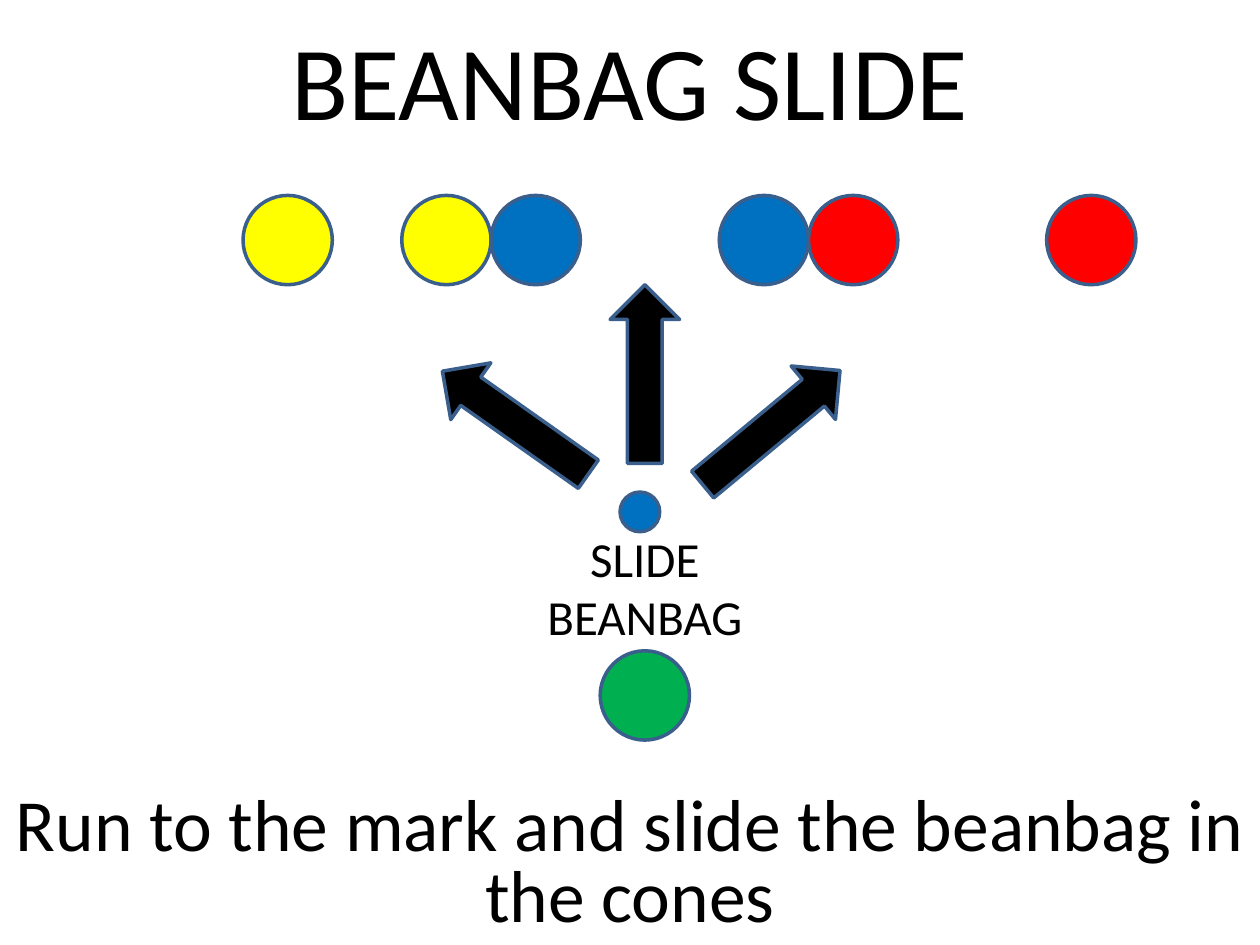
from dataclasses import dataclass

from pptx import Presentation
from pptx.dml.color import RGBColor
from pptx.enum.shapes import MSO_SHAPE
from pptx.enum.text import MSO_ANCHOR, MSO_AUTO_SIZE, PP_ALIGN
from pptx.util import Cm, Pt

OVAL = MSO_SHAPE.OVAL
ARROW = MSO_SHAPE.RIGHT_ARROW
CENTER = PP_ALIGN.CENTER
MIDDLE = MSO_ANCHOR.MIDDLE
TOP = MSO_ANCHOR.TOP


@dataclass(frozen=True)
class Theme:
    font: str = "Calibri"
    title_size: int = 60
    instruction_size: int = 42
    label_size: int = 28
    line_width: int = 2
    outline: str = "3A5F8C"
    black: str = "000000"
    yellow: str = "FFFF00"
    blue: str = "0070C0"
    red: str = "FF0000"
    green: str = "00B050"


@dataclass(frozen=True)
class Circle:
    """A marker on the playing area, in centimetres."""
    left: float
    top: float
    size: float
    color: str


@dataclass(frozen=True)
class Arrow:
    """A throwing direction: position in centimetres, angle in degrees."""
    left: float
    top: float
    angle: float


THEME = Theme()
SLIDE_WIDTH, SLIDE_HEIGHT = 25.4, 19.05
BAND_HEIGHT = 3.18
CONE_SIZE, CONE_TOP = 1.8, 3.94
ARROW_LENGTH, ARROW_WIDTH = 3.6, 1.4

# Each goal is a pair of cones of one colour
GOALS = [
    (THEME.yellow, (4.9, 8.1)),
    (THEME.blue, (9.9, 14.5)),
    (THEME.red, (16.3, 21.1)),
]
START_MARK = Circle(12.1, 13.12, CONE_SIZE, THEME.green)
BEANBAG = Circle(12.5, 9.92, 0.8, THEME.blue)
ARROWS = [Arrow(8.59, 7.82, 215.2), Arrow(11.2, 6.84, 270), Arrow(13.75, 7.92, 320.3)]


def style_shape(shape, color: str) -> None:
    shape.shadow.inherit = False
    shape.fill.solid()
    shape.fill.fore_color.rgb = RGBColor.from_string(color)
    shape.line.color.rgb = RGBColor.from_string(THEME.outline)
    shape.line.width = Pt(THEME.line_width)


def draw_circle(slide, circle: Circle) -> None:
    size = Cm(circle.size)
    shape = slide.shapes.add_shape(OVAL, Cm(circle.left), Cm(circle.top), size, size)
    style_shape(shape, circle.color)


def draw_arrow(slide, arrow: Arrow) -> None:
    shape = slide.shapes.add_shape(
        ARROW, Cm(arrow.left), Cm(arrow.top), Cm(ARROW_LENGTH), Cm(ARROW_WIDTH))
    shape.rotation = arrow.angle
    style_shape(shape, THEME.black)


def write_text(shape, text: str, size: int, anchor=MIDDLE):
    """Fill a text shape with one centred paragraph and return the paragraph."""
    text_frame = shape.text_frame
    text_frame.text = text
    text_frame.word_wrap = True
    text_frame.auto_size = MSO_AUTO_SIZE.NONE
    text_frame.vertical_anchor = anchor
    paragraph = text_frame.paragraphs[0]
    paragraph.alignment = CENTER
    font = paragraph.runs[0].font
    font.name = THEME.font
    font.size = Pt(size)
    font.color.rgb = RGBColor.from_string(THEME.black)
    return paragraph


def main() -> None:
    presentation = Presentation()
    presentation.slide_width = Cm(SLIDE_WIDTH)
    presentation.slide_height = Cm(SLIDE_HEIGHT)
    slide = presentation.slides.add_slide(presentation.slide_layouts[5])

    # Title across the top
    title = slide.shapes.title
    title.left, title.top = Cm(0), Cm(0)
    title.width, title.height = Cm(SLIDE_WIDTH), Cm(BAND_HEIGHT)
    write_text(title, "BEANBAG SLIDE", THEME.title_size)

    # Row of cones
    for color, lefts in GOALS:
        for left in lefts:
            draw_circle(slide, Circle(left, CONE_TOP, CONE_SIZE, color))

    # Start mark, beanbag and its directions
    draw_circle(slide, START_MARK)
    draw_circle(slide, BEANBAG)
    for arrow in ARROWS:
        draw_arrow(slide, arrow)

    # Label between beanbag and start mark
    label = slide.shapes.add_textbox(Cm(9.9), Cm(10.52), Cm(6.2), Cm(2.64))
    write_text(label, "SLIDE BEANBAG", THEME.label_size, TOP)
    label.text_frame.auto_size = MSO_AUTO_SIZE.SHAPE_TO_FIT_TEXT

    # Instruction across the bottom
    instruction = slide.shapes.add_textbox(
        Cm(0), Cm(SLIDE_HEIGHT - BAND_HEIGHT), Cm(SLIDE_WIDTH), Cm(BAND_HEIGHT))
    paragraph = write_text(
        instruction, "Run to the mark and slide the beanbag in the cones",
        THEME.instruction_size)
    paragraph.line_spacing = 0.8

    presentation.save("out.pptx")


if __name__ == "__main__":
    main()
